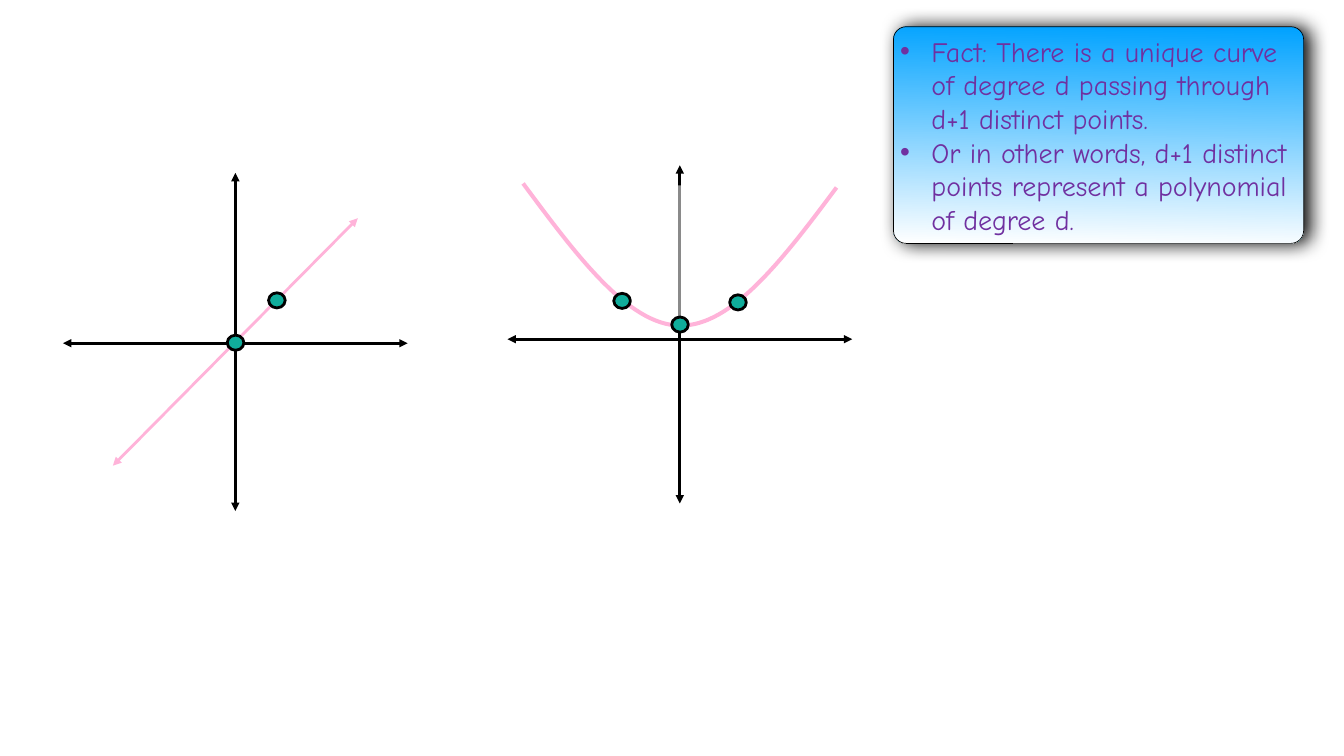
from lxml.etree import SubElement
from pptx import Presentation
from pptx.dml.color import RGBColor
from pptx.enum.shapes import MSO_CONNECTOR as CONNECTOR, MSO_SHAPE as SHAPE
from pptx.enum.text import MSO_ANCHOR as ANCHOR, PP_ALIGN as ALIGN
from pptx.oxml.ns import qn
from pptx.util import Emu, Pt

PX = 9144  # EMU per px, 100 px to the inch
COLORS = {
    "axis": "000000",
    "curve": "FFB3D9",
    "point": "10AD9B",
    "white": "FFFFFF",
    "box_top": "00A2FF",
    "text": "7030A0",
}
FACTS = [
    "Fact: There is a unique curve of degree d passing through d+1 distinct points.",
    "Or in other words, d+1 distinct points represent a polynomial of degree d.",
]


def px(*lengths):
    return [Emu(length * PX) for length in lengths]


def color(name):
    return RGBColor.from_string(COLORS[name])


def set_line(line, name, width):
    line.color.rgb = color(name)
    line.width = Pt(width)


def add_double_arrow(slide, start, end, name="axis"):
    arrow = slide.shapes.add_connector(CONNECTOR.STRAIGHT, *px(*start, *end))
    set_line(arrow.line, name, 4)
    properties = arrow._element.spPr
    outline = properties.find(qn("a:ln"))
    for tag in ("a:headEnd", "a:tailEnd"):
        SubElement(outline, qn(tag), type="triangle")
    SubElement(properties, qn("a:effectLst"))


def add_axes(slide, center_x, top, axis_y):
    add_double_arrow(slide, (center_x, top), (center_x, top + 671))
    add_double_arrow(slide, (center_x + 342, axis_y), (center_x - 342, axis_y))


def add_point(slide, left, top):
    point = slide.shapes.add_shape(SHAPE.OVAL, *px(left, top, 33, 30))
    point.shadow.inherit = False
    point.fill.solid()
    point.fill.fore_color.rgb = color("point")
    set_line(point.line, "axis", 4)


def add_curve(slide, start, controls):
    """Draw Bezier segments, each given by three points of controls."""
    builder = slide.shapes.build_freeform(*start, scale=PX)
    builder.add_line_segments(controls, close=False)
    curve = builder.convert_to_shape()
    curve.shadow.inherit = False
    curve.fill.solid()
    curve.fill.fore_color.rgb = color("white")
    fill_color = curve._element.spPr.find(qn("a:solidFill"))[0]
    SubElement(fill_color, qn("a:alpha"), val="54000")
    set_line(curve.line, "curve", 5.75)

    # Merge every three straight steps into one cubic segment
    steps = list(curve._element.iter(qn("a:lnTo")))
    for first in range(0, len(steps), 3):
        segment = SubElement(steps[first].getparent(), qn("a:cubicBezTo"))
        for step in steps[first:first + 3]:
            segment.append(step[0])
            step.getparent().remove(step)


def add_shadow(shape):
    shape.shadow.inherit = False
    effects = shape._element.spPr.find(qn("a:effectLst"))
    shadow = SubElement(effects, qn("a:outerShdw"), blurRad=str(Pt(28)),
                        dist=str(Pt(9)), dir="0", algn="ctr", rotWithShape="0")
    shade = SubElement(shadow, qn("a:srgbClr"), val=COLORS["axis"])
    SubElement(shade, qn("a:alpha"), val="97000")


def add_fact_box(slide, left, top, width, height):
    box = slide.shapes.add_shape(SHAPE.ROUNDED_RECTANGLE, *px(left, top, width, height))
    box.adjustments[0] = 0.059
    box.fill.gradient()
    box.fill.gradient_angle = 269
    for stop, name, position in zip(box.fill.gradient_stops, ("box_top", "white"), (0, 1)):
        stop.color.rgb = color(name)
        stop.position = position
    set_line(box.line, "axis", 1)
    add_shadow(box)

    text_frame = box.text_frame
    text_frame.word_wrap = True
    text_frame.vertical_anchor = ANCHOR.MIDDLE
    text_frame.margin_left, text_frame.margin_top = px(6, 6)
    text_frame.margin_right, text_frame.margin_bottom = px(6, 6)
    text_frame.text = "\n".join(FACTS)
    for paragraph in text_frame.paragraphs:
        paragraph.alignment = ALIGN.LEFT
        properties = paragraph._p.get_or_add_pPr()
        properties.set("marL", str(62 * PX))
        properties.set("indent", str(-62 * PX))
        SubElement(properties, qn("a:buFont"), typeface="Arial")
        SubElement(properties, qn("a:buChar"), char="•")
        font = paragraph.runs[0].font
        font.name = "Comic Neue"
        font.size = Pt(40)
        font.color.rgb = color("text")


def main():
    presentation = Presentation()
    presentation.slide_width, presentation.slide_height = px(2667, 1500)
    slide = presentation.slides.add_slide(presentation.slide_layouts[6])

    # Line through two points
    add_axes(slide, 467, 343, 681)
    add_double_arrow(slide, (710, 433), (224, 924), "curve")
    for left, top in [(451, 665), (533, 581)]:
        add_point(slide, left, top)

    # Parabola through three points
    add_axes(slide, 1349, 328, 673)
    add_curve(slide, (1038, 364), [(1142, 504), (1246, 645), (1349, 646),
                                   (1453, 648), (1557, 510), (1660, 372)])
    for left, top in [(1333, 629), (1448, 585), (1218, 582)]:
        add_point(slide, left, top)

    # Statement of the fact
    add_fact_box(slide, 1773, 53, 814, 430)

    presentation.save("out.pptx")


if __name__ == "__main__":
    main()
